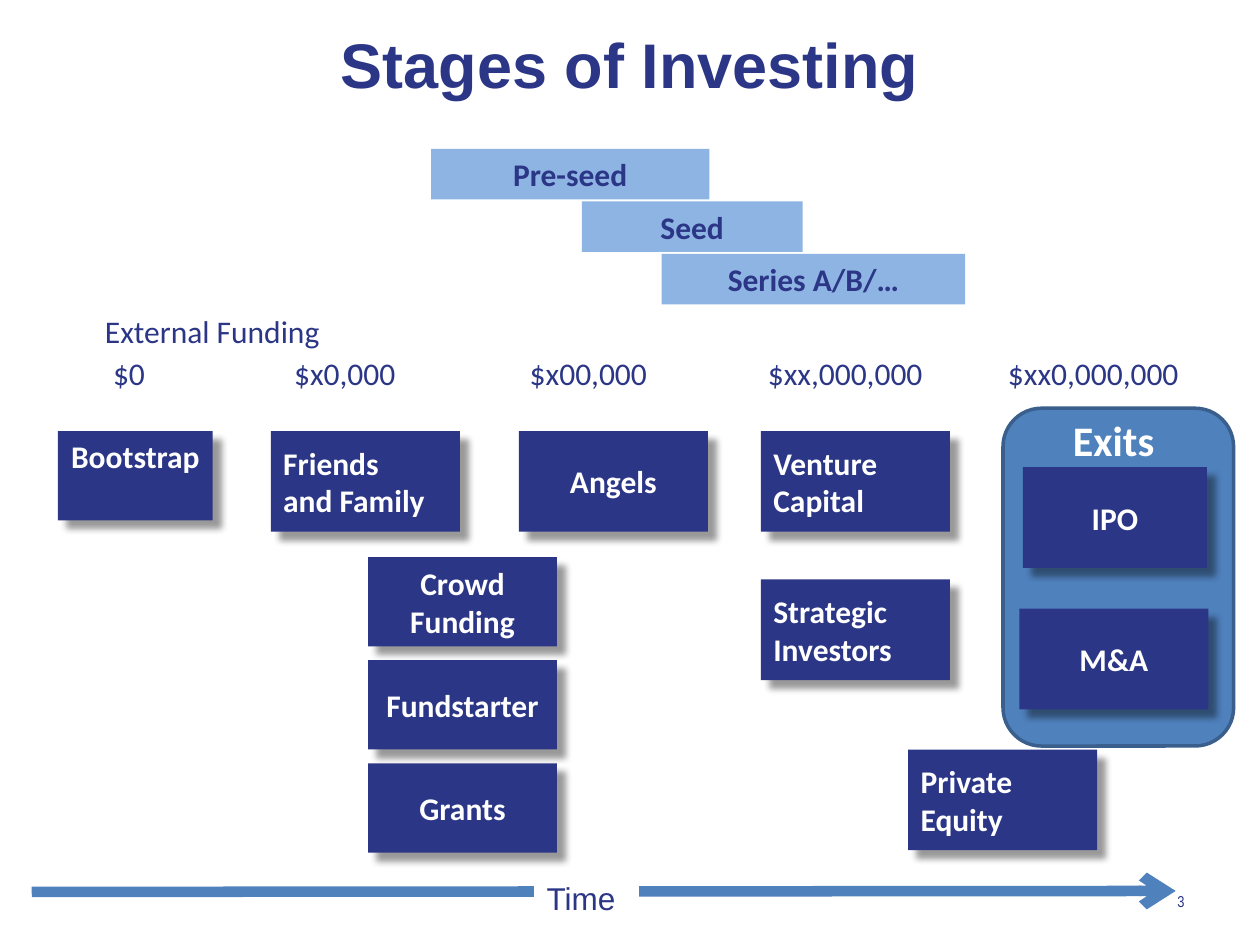
from lxml.etree import SubElement
from pptx import Presentation
from pptx.dml.color import RGBColor
from pptx.enum.shapes import MSO_CONNECTOR, MSO_SHAPE
from pptx.enum.text import MSO_ANCHOR, PP_ALIGN
from pptx.oxml.ns import qn
from pptx.util import Cm, Pt

NAVY, BLUE, SKY, WHITE = "2B3686", "4F81BD", "8EB4E3", "FFFFFF"
LEFT, MID, RIGHT = PP_ALIGN.LEFT, PP_ALIGN.CENTER, PP_ALIGN.RIGHT


def color(code):
    return RGBColor.from_string(code)


def write(shape, text, size=18, ink=NAVY, bold=False, face="Calibri",
          align=MID, wrap=True, anchor=MSO_ANCHOR.MIDDLE):
    frame = shape.text_frame
    frame.text = text
    frame.word_wrap = wrap
    frame.vertical_anchor = anchor
    for para in frame.paragraphs:
        para.alignment = align
        for run in para.runs:
            font = run.font
            font.size = Pt(size)
            font.name = face
            font.bold = bold
            font.color.rgb = color(ink)


def label(slide, x, y, w, h, text, **style):
    box = slide.shapes.add_textbox(Cm(x), Cm(y), Cm(w), Cm(h))
    write(box, text, **style)
    return box


def block(slide, x, y, w, h, fill, kind=MSO_SHAPE.RECTANGLE):
    shape = slide.shapes.add_shape(kind, Cm(x), Cm(y), Cm(w), Cm(h))
    shape.shadow.inherit = False
    shape.fill.solid()
    shape.fill.fore_color.rgb = color(fill)
    shape.line.fill.background()
    return shape


def shade(shape):
    effects = shape._element.spPr.find(qn("a:effectLst"))
    outer = SubElement(effects, qn("a:outerShdw"), blurRad=str(Pt(4)),
                       dist=str(Pt(7)), dir="2700000", algn="tl",
                       rotWithShape="0")
    tint = SubElement(outer, qn("a:srgbClr"), val="000000")
    SubElement(tint, qn("a:alpha"), val="40000")


def card(slide, x, y, text, w=3.81, h=2.03, **style):
    shape = block(slide, x, y, w, h, NAVY)
    shade(shape)
    write(shape, text, ink=WHITE, bold=True, **style)


def bar(slide, x, y, w, text):
    write(block(slide, x, y, w, 1.02, SKY), text, bold=True)


def arrow(slide, x1, y1, x2, y2):
    line = slide.shapes.add_connector(
        MSO_CONNECTOR.STRAIGHT, Cm(x1), Cm(y1), Cm(x2), Cm(y2))
    line.line.color.rgb = color(BLUE)
    line.line.width = Pt(6)
    SubElement(line.line._get_or_add_ln(), qn("a:tailEnd"), type="arrow")
    SubElement(line._element.spPr, qn("a:effectLst"))


def sums(slide, x, y, w, h, items):
    text = "".join("\t" + name for _, name in items)
    box = label(slide, x, y, w, h, text, align=LEFT)
    props = box.text_frame.paragraphs[0]._p.get_or_add_pPr()
    stops = SubElement(props, qn("a:tabLst"))
    for stop, _ in items:
        SubElement(stops, qn("a:tab"), pos=str(Cm(stop)), algn="l")


def main():
    deck = Presentation()
    deck.slide_width, deck.slide_height = Cm(25.4), Cm(19.05)
    slide = deck.slides.add_slide(deck.slide_layouts[5])

    title = slide.shapes.title
    title.left, title.top = Cm(0.58), Cm(0.13)
    title.width, title.height = Cm(24.23), Cm(2.29)
    write(title, "Stages of Investing", size=36, bold=True, face="Arial")

    exits = block(slide, 20.22, 8.23, 4.65, 6.81, BLUE,
                  MSO_SHAPE.ROUNDED_RECTANGLE)
    exits.line.color.rgb = color("3A5F8C")
    exits.line.width = Pt(2)

    row = 8.69
    card(slide, 1.17, row, "Bootstrap", w=3.12, h=1.8, wrap=False,
         anchor=MSO_ANCHOR.TOP)
    for x, y, text in (
            (5.46, row, "Friends\nand Family"),
            (15.34, row, "Venture\nCapital"),
            (15.34, 11.68, "Strategic\nInvestors"),
            (18.31, 15.11, "Private\nEquity")):
        card(slide, x, y, text, align=LEFT, wrap=False)
    card(slide, 10.46, row, "Angels")
    card(slide, 20.62, 9.42, "IPO", w=3.71)
    card(slide, 20.55, 12.27, "M&A")
    for i, text in enumerate(("Crowd Funding", "Fundstarter", "Grants")):
        card(slide, 7.42, 11.23 + i * 2.08, text, h=1.8)
    label(slide, 21.36, 8.23, 2.18, 1.27, "Exits", size=24, ink=WHITE,
          bold=True, wrap=False)

    bars = ((8.69, 5.61, "Pre-seed"), (11.73, 4.45, "Seed"),
            (13.34, 6.12, "Series A/B/…"))
    for i, (x, w, text) in enumerate(bars):
        bar(slide, x, 3 + i * 1.06, w, text)

    label(slide, 1.83, 6.17, 4.9, 1.02, "External Funding", wrap=False)
    sums(slide, 1.17, 7.01, 23.98, 1.02, (
        (0.86, "$0"), (4.51, "$x0,000"), (9.26, "$x00,000"),
        (14.06, "$xx,000,000"), (18.9, "$xx0,000,000")))

    arrow(slide, 0.64, 17.98, 23.7, 17.96)
    time = block(slide, 10.77, 17.6, 2.11, 1.02, WHITE)
    write(time, "Time", face="Arial", align=LEFT)
    label(slide, 22.66, 17.65, 1.47, 1.02, "3", size=9,
          face="Arial Narrow", align=RIGHT)

    deck.save("out.pptx")


if __name__ == "__main__":
    main()
